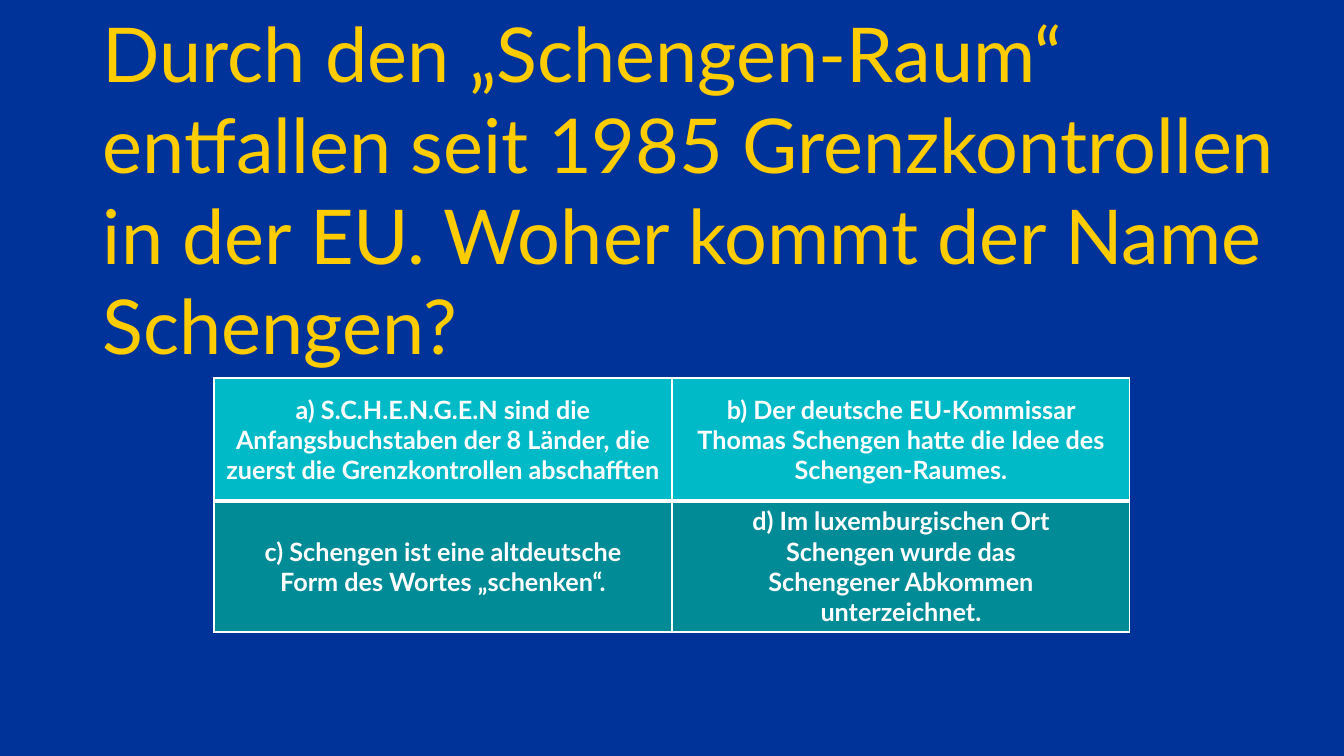
from pptx import Presentation, util as u
from pptx.dml.color import RGBColor
from pptx.enum import text
from pptx.oxml import parse_xml
from pptx.oxml.ns import nsdecls

# Content
QUESTION = ("Durch den „Schengen-Raum“ entfallen seit 1985 Grenzkontrollen "
            "in der EU. Woher kommt der Name Schengen?")
ANSWERS = [
    [["a) S.C.H.E.N.G.E.N sind die Anfangsbuchstaben der 8 Länder, "
      "die zuerst die Grenzkontrollen abschafften"],
     ["b) Der deutsche EU-Kommissar Thomas Schengen hatte die Idee des Schengen-Raumes."]],
    [["c) Schengen ist eine altdeutsche", "Form des Wortes „schenken“."],
     ["d) Im luxemburgischen Ort", "Schengen wurde das",
      "Schengener Abkommen", "unterzeichnet."]],
]
COLORS = {"blue": "003399", "yellow": "FFCC00", "white": "FFFFFF",
          "turquoise": "00BAC8", "teal": "008B96"}
ROW_FILLS = ["turquoise", "teal"]
FONT = "Lato"

# Layout in px
SLIDE_W, SLIDE_H = 1344, 756
QUESTION_BOX = (93, 40, 1218, 297)
COLUMN_W, ROW_H, ANSWERS_TOP = 458, 123, 378
EMU_PER_PX = u.Inches(1) / 100.8


def px(length):
    return u.Emu(round(length * EMU_PER_PX))


def rgb(name):
    return RGBColor.from_string(COLORS[name])


def add_run(paragraph, words, size, color, bold=False):
    run = paragraph.add_run()
    run.text = words
    run.font.name, run.font.size, run.font.bold = FONT, u.Pt(size), bold
    run.font.color.rgb = rgb(color)


def add_borders(cell, widths):
    props = cell._tc.get_or_add_tcPr()
    for index, (side, width) in enumerate(widths.items()):
        props.insert(index, parse_xml(
            f'<a:ln{side} {nsdecls("a")} w="{u.Pt(width)}"><a:solidFill>'
            f'<a:srgbClr val="{COLORS["white"]}"/></a:solidFill></a:ln{side}>'))


# Slide and background
prs = Presentation()
prs.slide_width, prs.slide_height = px(SLIDE_W), px(SLIDE_H)
slide = prs.slides.add_slide(prs.slide_layouts[6])
slide.background.fill.solid()
slide.background.fill.fore_color.rgb = rgb("blue")

# Question
question = slide.shapes.add_textbox(*map(px, QUESTION_BOX)).text_frame
question.word_wrap = True
question.vertical_anchor = text.MSO_ANCHOR.MIDDLE
add_run(question.paragraphs[0], QUESTION, 54, "yellow")

# Answers, centred on the slide
rows, columns = len(ANSWERS), len(ANSWERS[0])
answers_w = columns * COLUMN_W
answers = slide.shapes.add_table(
    rows, columns, px((SLIDE_W - answers_w) / 2), px(ANSWERS_TOP),
    px(answers_w), px(rows * ROW_H)).table
for r, answer_row in enumerate(ANSWERS):
    for c, lines in enumerate(answer_row):
        cell = answers.cell(r, c)
        cell.fill.solid()
        cell.fill.fore_color.rgb = rgb(ROW_FILLS[r])
        cell.vertical_anchor = text.MSO_ANCHOR.MIDDLE
        # The heavy rule separates the first row from the second
        add_borders(cell, {"L": 1, "R": 1, "T": 3 if r == 1 else 1,
                           "B": 3 if r == 0 else 1})
        for i, line in enumerate(lines):
            frame = cell.text_frame
            paragraph = frame.add_paragraph() if i else frame.paragraphs[0]
            paragraph.alignment = text.PP_ALIGN.CENTER
            add_run(paragraph, line, 18, "white", bold=True)

prs.save("out.pptx")
